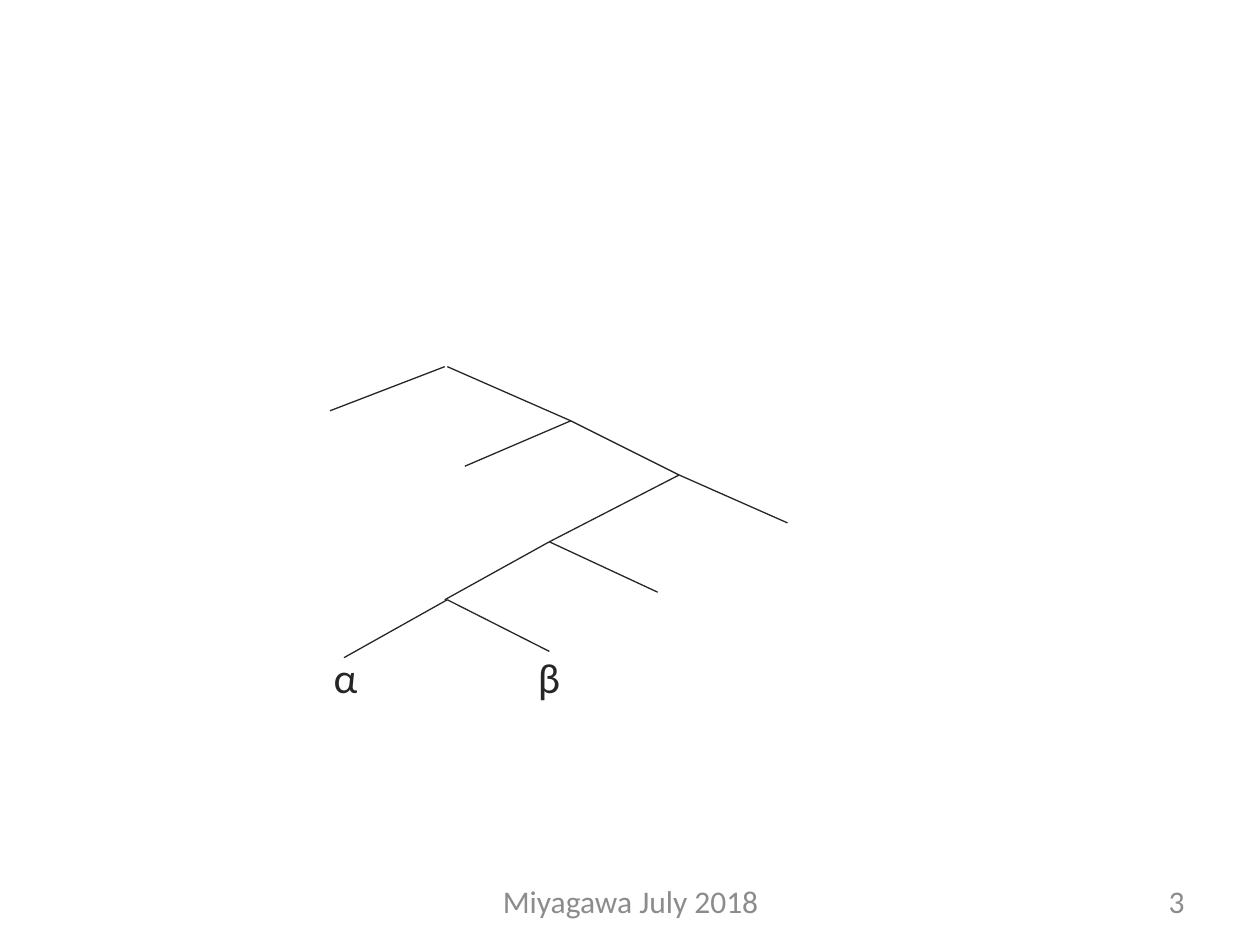
from pptx import Presentation
from pptx.dml.color import RGBColor
from pptx.enum.shapes import MSO_CONNECTOR
from pptx.enum.text import MSO_ANCHOR, PP_ALIGN
from pptx.oxml.ns import qn
from pptx.util import Inches, Pt
from lxml.etree import SubElement

INK, GREY = "262626", "8C8C8C"

deck = Presentation()
deck.slide_width, deck.slide_height = Inches(10), Inches(7.5)
slide = deck.slides.add_slide(deck.slide_layouts[6])

# Grid of 100 columns by 75 rows
cell = deck.slide_width / 100


def grid(*cells):
    return [round(n * cell) for n in cells]


def label(box, text, size, color, align, anchor):
    shape = slide.shapes.add_textbox(*grid(*box))
    frame = shape.text_frame
    frame.word_wrap = True
    frame.vertical_anchor = anchor
    frame.text = text
    para = frame.paragraphs[0]
    para.alignment = align
    for run in para.runs:
        run.font.name = "Calibri"
        run.font.size = Pt(size)
        run.font.color.rgb = RGBColor.from_string(color)
    return para


# Footer and page number
label((34.2, 69.5, 31.7, 4), "Miyagawa July 2018", 18, GREY,
      PP_ALIGN.CENTER, MSO_ANCHOR.MIDDLE)
label((71.7, 69.5, 23.3, 4), "3", 18, GREY,
      PP_ALIGN.RIGHT, MSO_ANCHOR.MIDDLE)

# Leaf labels, set apart by a tab stop
leaves = label((25.5, 51.2, 20.4, 5), "α\tβ", 24, INK,
               PP_ALIGN.LEFT, MSO_ANCHOR.TOP)
tabs = SubElement(leaves._p.get_or_add_pPr(), qn("a:tabLst"))
SubElement(tabs, qn("a:tab"), pos=str(grid(16.2)[0]), algn="l")

# Tree nodes, from the root down
root, upper, middle = (35.5, 29.1), (45.3, 33.4), (53.9, 37.7)
lower, base = (43.6, 43), (35.5, 47.6)

# Branches; two of them start just left of their node
branches = [
    ((35.3, 29.1), (26.2, 32.6)), (root, upper),
    (upper, (36.9, 37)), (upper, middle),
    (middle, lower), (middle, (62.5, 41.5)),
    (lower, (35.3, 47.6)), (lower, (52.2, 47)),
    (base, (27.3, 52.2)), (base, (43.6, 51.7)),
]
for start, end in branches:
    line = slide.shapes.add_connector(MSO_CONNECTOR.STRAIGHT,
                                      *grid(*start, *end))
    line.line.color.rgb = RGBColor.from_string(INK)
    line.line.width = Pt(0.75)
    SubElement(line._element.spPr, qn("a:effectLst"))

deck.save("out.pptx")
